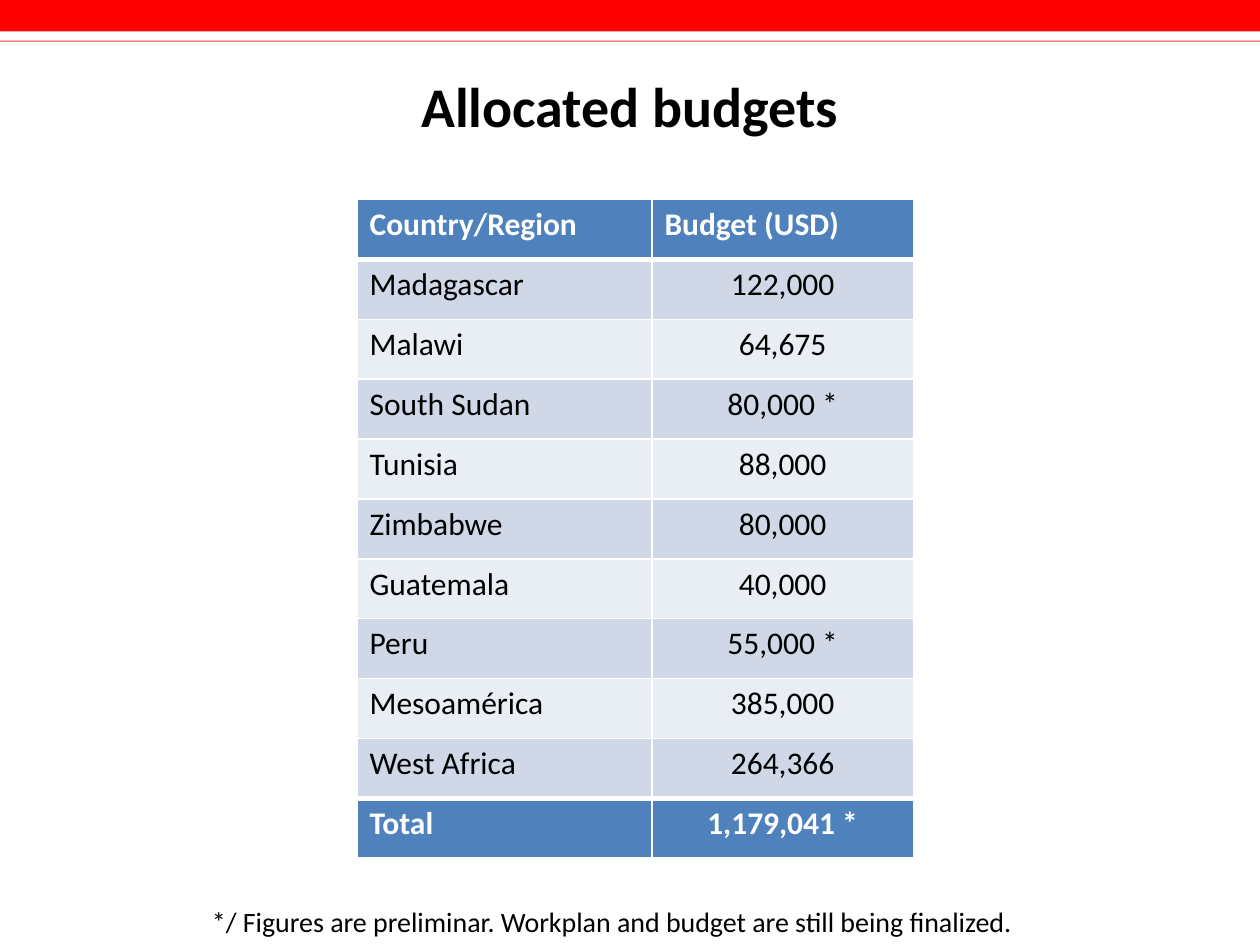
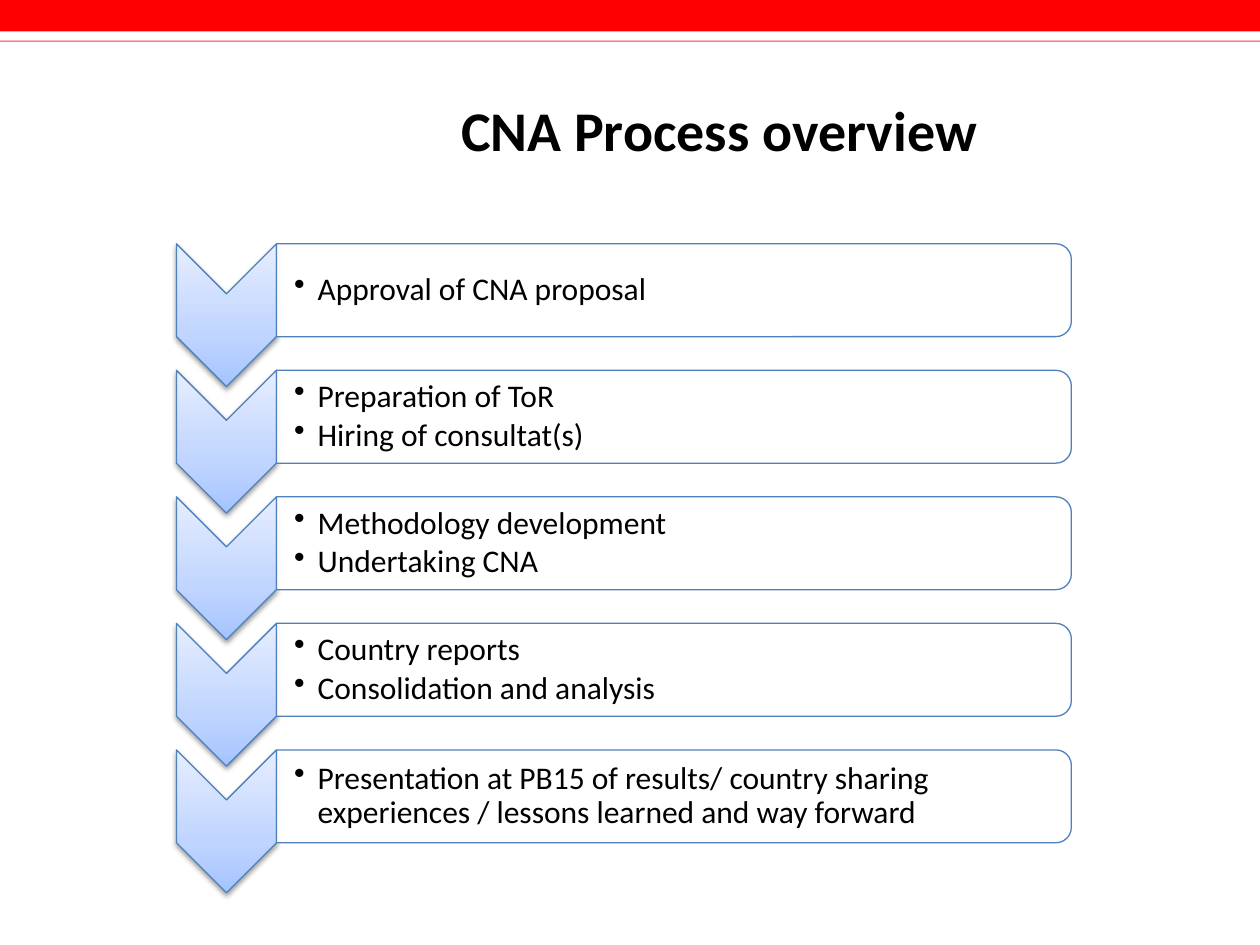
from lxml.etree import SubElement
from pptx import Presentation
from pptx.dml.color import RGBColor
from pptx.enum.shapes import MSO_SHAPE
from pptx.enum.text import MSO_ANCHOR, PP_ALIGN
from pptx.oxml import parse_xml
from pptx.oxml.ns import nsdecls, qn
from pptx.util import Pt

COLORS = {
    "band": "FF0000", "rule": "FF3333", "text": "000000", "white": "FFFFFF",
    "blue": "4F81BD", "row_dark": "D0D8E8", "row_light": "E9EDF4",
    "arrow_low": "A4C4FF", "arrow_mid": "BFD4FF", "arrow_high": "E6EEFF",
}
FONT = "Calibri"

BUDGETS = [
    ("Country/Region", "Budget (USD)"),
    ("Madagascar", "122,000"),
    ("Malawi", "64,675"),
    ("South Sudan", "80,000 *"),
    ("Tunisia", "88,000"),
    ("Zimbabwe", "80,000"),
    ("Guatemala", "40,000"),
    ("Peru", "55,000 *"),
    ("Mesoamérica", "385,000"),
    ("West Africa", "264,366"),
    ("Total", "1,179,041 *"),
]
STEPS = [
    ["Approval of CNA proposal"],
    ["Preparation of ToR", "Hiring of consultat(s)"],
    ["Methodology development", "Undertaking CNA"],
    ["Country reports", "Consolidation and analysis"],
    ["Presentation at PB15 of results/ country sharing experiences"
     " / lessons learned and way forward"],
]


def rgb(name):
    return RGBColor.from_string(COLORS[name])


def write(tf, lines, size=18, color="text", bold=False, align=PP_ALIGN.LEFT,
          anchor=MSO_ANCHOR.TOP, bullet=False):
    tf.word_wrap = True
    tf.vertical_anchor = anchor
    for i, line in enumerate(lines):
        p = tf.paragraphs[0] if i == 0 else tf.add_paragraph()
        p.alignment = align
        if bullet:
            pPr = p._p.get_or_add_pPr()
            pPr.set("marL", str(Pt(13.5)))
            pPr.set("indent", str(-Pt(13.5)))
            SubElement(pPr, qn("a:buChar"), char="•")
            p.line_spacing = 0.9
            p.space_after = Pt(2.7)
        r = p.add_run()
        r.text = line
        r.font.name, r.font.size, r.font.bold = FONT, Pt(size), bold
        r.font.color.rgb = rgb(color)


def add_text(slide, box, lines, **fmt):
    tf = slide.shapes.add_textbox(*map(Pt, box)).text_frame
    write(tf, lines, **fmt)
    return tf


def add_box(slide, kind, box, fill, line=None, turned=False):
    x, y, w, h = box
    if turned:
        x, y, w, h = x + (w - h) / 2, y + (h - w) / 2, h, w
    sp = slide.shapes.add_shape(kind, Pt(x), Pt(y), Pt(w), Pt(h))
    sp.rotation = 90 if turned else 0
    sp.shadow.inherit = False
    sp.fill.solid()
    sp.fill.fore_color.rgb = rgb(fill)
    if line:
        sp.line.color.rgb = rgb(line)
        sp.line.width = Pt(0.75)
    else:
        sp.line.fill.background()
    return sp


def add_slide(prs, title, title_box):
    slide = prs.slides.add_slide(prs.slide_layouts[6])
    add_box(slide, MSO_SHAPE.RECTANGLE, (0, 0, 720, 18), "band")
    add_box(slide, MSO_SHAPE.RECTANGLE, (0, 23.25, 720, 0.6), "rule")
    add_text(slide, title_box, [title], size=32, bold=True,
             align=PP_ALIGN.CENTER, anchor=MSO_ANCHOR.MIDDLE)
    return slide


def add_borders(cell, top=1, bottom=1):
    tcPr = cell._tc.get_or_add_tcPr()
    widths = {"lnL": 1, "lnR": 1, "lnT": top, "lnB": bottom}
    for i, (tag, width) in enumerate(widths.items()):
        tcPr.insert(i, parse_xml(
            f'<a:{tag} {nsdecls("a")} w="{Pt(width)}"><a:solidFill>'
            f'<a:srgbClr val="{COLORS["white"]}"/></a:solidFill></a:{tag}>'))


def add_budget_table(slide, box):
    x, y, w, h = box
    last = len(BUDGETS) - 1
    table = slide.shapes.add_table(len(BUDGETS), 2, *map(Pt, box)).table
    for column, share in zip(table.columns, (0.53, 0.47)):
        column.width = Pt(w * share)
    for i, values in enumerate(BUDGETS):
        table.rows[i].height = Pt(h / len(BUDGETS))
        strong = i in (0, last)
        fill = "blue" if strong else "row_dark" if i % 2 else "row_light"
        for j, value in enumerate(values):
            cell = table.cell(i, j)
            cell.fill.solid()
            cell.fill.fore_color.rgb = rgb(fill)
            add_borders(cell, top=3 if i in (1, last) else 1,
                        bottom=3 if i in (0, last - 1) else 1)
            write(cell.text_frame, [value], bold=strong,
                  color="white" if strong else "text",
                  align=PP_ALIGN.CENTER if i and j else PP_ALIGN.LEFT)


def style_arrow(sp):
    spPr = sp._element.spPr
    stops = "".join(
        f'<a:gs pos="{pos}"><a:srgbClr val="{COLORS[name]}"/></a:gs>'
        for pos, name in ((0, "arrow_low"), (35000, "arrow_mid"), (100000, "arrow_high")))
    spPr.replace(spPr.find(qn("a:solidFill")), parse_xml(
        f'<a:gradFill {nsdecls("a")} rotWithShape="0"><a:gsLst>{stops}</a:gsLst>'
        '<a:lin ang="16200000" scaled="0"/></a:gradFill>'))
    spPr.replace(spPr.find(qn("a:effectLst")), parse_xml(
        f'<a:effectLst {nsdecls("a")}><a:outerShdw blurRad="{Pt(3.1)}" '
        f'dist="{Pt(1.6)}" dir="5400000" rotWithShape="0">'
        f'<a:srgbClr val="{COLORS["text"]}"><a:alpha val="38000"/></a:srgbClr>'
        '</a:outerShdw></a:effectLst>'))


def add_step(slide, box, lines):
    x, y, w, h = box
    arrow_w, panel_h = 57.2, 53.1
    arrow = add_box(slide, MSO_SHAPE.CHEVRON, (x, y, arrow_w, h),
                    "white", "blue", turned=True)
    style_arrow(arrow)
    panel_x, panel_w = x + arrow_w, w - arrow_w
    panel = add_box(slide, MSO_SHAPE.ROUND_2_SAME_RECTANGLE,
                    (panel_x, y, panel_w, panel_h), "white", "blue", turned=True)
    color = panel._element.spPr.find(qn("a:solidFill"))[0]
    SubElement(color, qn("a:alpha"), val="90000")
    tf = add_text(slide, (panel_x, y + 2.6, panel_w - 2.6, panel_h - 5.2), lines,
                  anchor=MSO_ANCHOR.MIDDLE, bullet=True)
    tf.margin_left = Pt(10)
    tf.margin_top = tf.margin_right = tf.margin_bottom = Pt(0.9)


def budget_slide(prs):
    slide = add_slide(prs, "Allocated budgets", (36, 36, 648, 48))
    add_budget_table(slide, (204, 114, 318, 376.5))
    add_text(slide, (114, 513.4, 486, 26.6), [
        "*/ Figures are preliminar. Workplan and budget are still being finalized."],
        size=16)


def process_slide(prs):
    slide = add_slide(prs, "CNA Process overview", (138, 36, 546, 75.6))
    x, y, w, h, pitch = 100.8, 139.3, 511.4, 81.6, 72.3
    for i, lines in enumerate(STEPS):
        add_step(slide, (x, y + i * pitch, w, h), lines)


def main():
    prs = Presentation()
    prs.slide_width, prs.slide_height = Pt(720), Pt(540)
    budget_slide(prs)
    process_slide(prs)
    prs.save("out.pptx")


if __name__ == "__main__":
    main()
